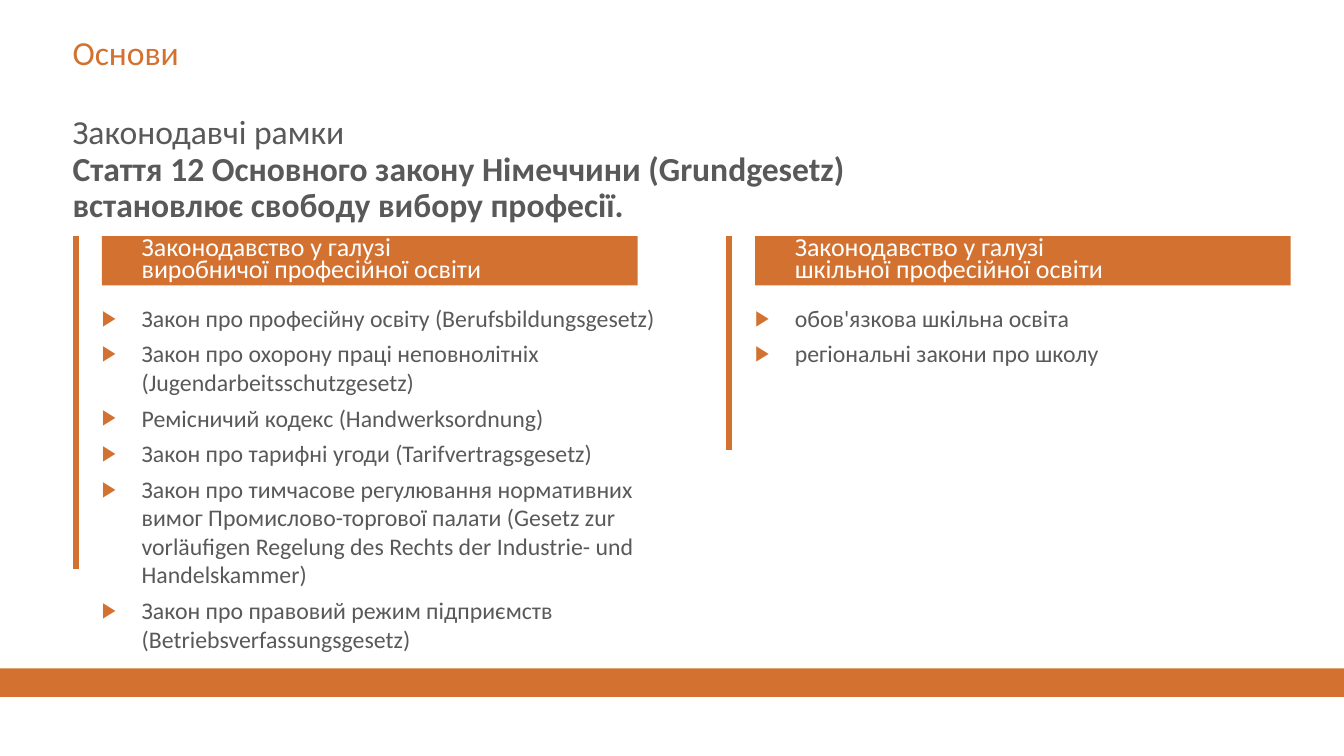
from lxml import etree
from pptx import Presentation
from pptx.dml.color import RGBColor
from pptx.enum.shapes import MSO_CONNECTOR, MSO_SHAPE
from pptx.enum.text import MSO_ANCHOR, PP_ALIGN
from pptx.oxml.ns import qn
from pptx.util import Cm, Pt

COLORS = {"orange": "D37230", "gray": "595959", "white": "FFFFFF"}

presentation = Presentation()
presentation.slide_width = Cm(33.87)
presentation.slide_height = Cm(19.05)
slide = presentation.slides.add_slide(presentation.slide_layouts[6])


def add_box(left, top, width, height, fill=None):
    """Add a filled rectangle or a plain text box without insets."""
    area = Cm(left), Cm(top), Cm(width), Cm(height)
    if fill:
        shape = slide.shapes.add_shape(MSO_SHAPE.RECTANGLE, *area)
        shape.shadow.inherit = False
        shape.fill.solid()
        shape.fill.fore_color.rgb = RGBColor.from_string(COLORS[fill])
        shape.line.fill.background()
    else:
        shape = slide.shapes.add_textbox(*area)
    frame = shape.text_frame
    frame.word_wrap = True
    frame.margin_left = frame.margin_top = frame.margin_right = frame.margin_bottom = 0
    return shape


def add_lines(paragraph, lines, size, color, bold=False):
    """Add one run per line, with line breaks between them."""
    for index, line in enumerate(lines):
        if index:
            paragraph.add_line_break()
        run = paragraph.add_run()
        run.text = line
        run.font.name = "Calibri"
        run.font.size = Pt(size)
        run.font.bold = bold
        run.font.color.rgb = RGBColor.from_string(COLORS[color])


# Footer band
add_box(0, 16.84, 33.87, 0.72, "orange")

# Title
title = add_box(1.83, 0.81, 25, 1.25)
add_lines(title.text_frame.paragraphs[0], ["Основи"], 24, "orange")

# Introduction
introduction = add_box(1.83, 2.92, 30.7, 2.8)
paragraph = introduction.text_frame.paragraphs[0]
paragraph.line_spacing = 0.9
add_lines(paragraph, ["Законодавчі рамки"], 24, "gray")
paragraph.add_line_break()
add_lines(paragraph, ["Стаття 12 Основного закону Німеччини (Grundgesetz)",
                      "встановлює свободу вибору професії."], 24, "gray", bold=True)

# Columns: left edge, list width, rule length, heading, list items
columns = [
    (2.57, 14.9, 8.4,
     ["Законодавство у галузі", "виробничої професійної освіти"],
     ["Закон про професійну освіту (Berufsbildungsgesetz)",
      "Закон про охорону праці неповнолітніх (Jugendarbeitsschutzgesetz)",
      "Ремісничий кодекс (Handwerksordnung)",
      "Закон про тарифні угоди (Tarifvertragsgesetz)",
      "Закон про тимчасове регулювання нормативних вимог Промислово-торгової палати "
      "(Gesetz zur vorläufigen Regelung des Rechts der Industrie- und Handelskammer)",
      "Закон про правовий режим підприємств (Betriebsverfassungsgesetz)"]),
    (19.03, 13.5, 5.38,
     ["Законодавство у галузі", "шкільної професійної освіти"],
     ["обов'язкова шкільна освіта", "регіональні закони про школу"]),
]
column_top = 5.95
indent = Cm(1)

for left, list_width, rule_length, heading, items in columns:
    # Heading bar
    bar = add_box(left, column_top, 13.5, 1.24, "orange")
    bar.text_frame.margin_left = indent
    bar.text_frame.vertical_anchor = MSO_ANCHOR.MIDDLE
    paragraph = bar.text_frame.paragraphs[0]
    paragraph.alignment = PP_ALIGN.LEFT
    paragraph.line_spacing = 0.7
    add_lines(paragraph, heading, 18.5, "white")

    # Bulleted list
    frame = add_box(left, 7.65, list_width, 7.26).text_frame
    for index, item in enumerate(items):
        paragraph = frame.add_paragraph() if index else frame.paragraphs[0]
        properties = paragraph._p.get_or_add_pPr()
        properties.set("marL", str(indent))
        properties.set("indent", str(-indent))
        bullet_color = etree.SubElement(properties, qn("a:buClr"))
        etree.SubElement(bullet_color, qn("a:srgbClr"), val=COLORS["orange"])
        etree.SubElement(properties, qn("a:buSzPct"), val="90000")
        etree.SubElement(properties, qn("a:buFont"), typeface="Arial")
        etree.SubElement(properties, qn("a:buChar"), char="▶")
        if index:
            paragraph.space_before = Pt(5)
        add_lines(paragraph, [item], 17, "gray")

    # Vertical rule beside the column
    rule_x = Cm(left - 0.65)
    rule = slide.shapes.add_connector(MSO_CONNECTOR.STRAIGHT, rule_x, Cm(column_top),
                                      rule_x, Cm(column_top + rule_length))
    rule.line.color.rgb = RGBColor.from_string(COLORS["orange"])
    rule.line.width = Pt(4.5)
    etree.SubElement(rule._element.spPr, qn("a:effectLst"))

presentation.save("out.pptx")
